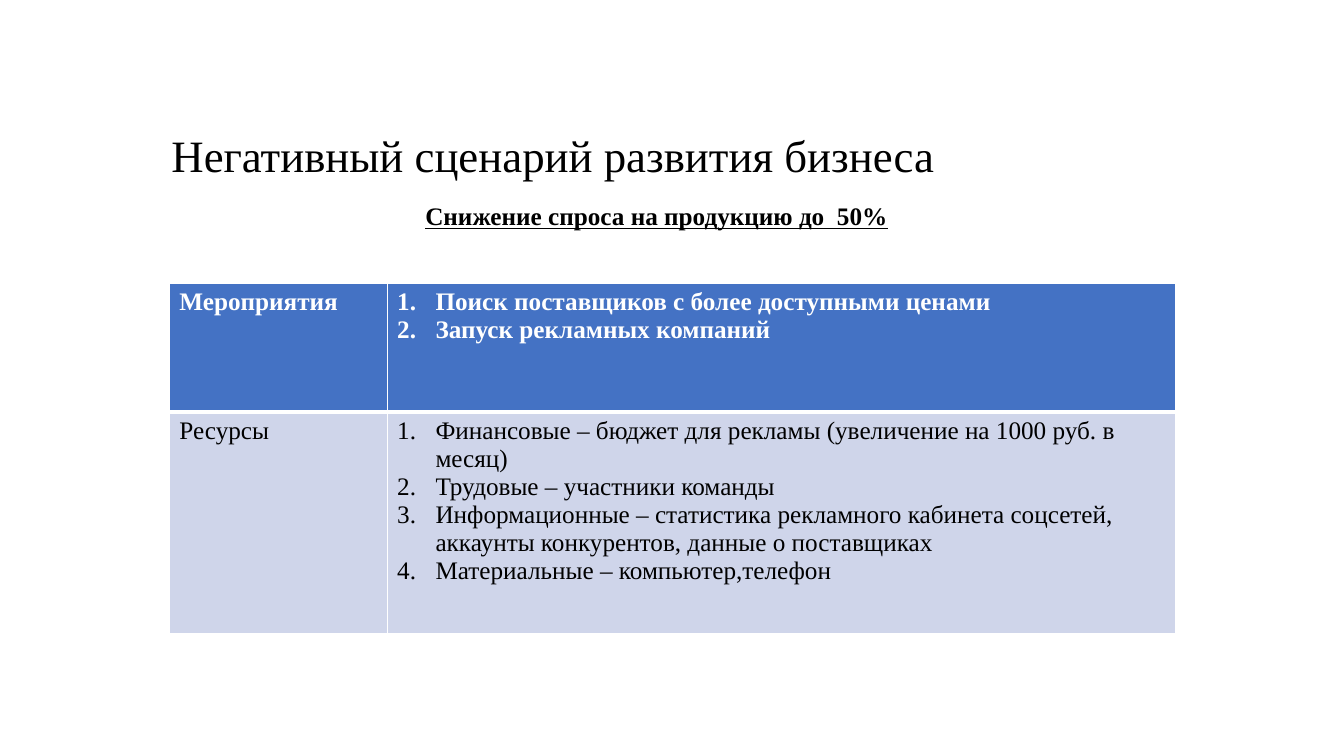
from pptx import Presentation
from pptx.dml.color import RGBColor
from pptx.enum.text import MSO_ANCHOR, MSO_AUTO_SIZE, PP_ALIGN
from pptx.oxml.ns import qn
from pptx.util import Inches, Pt
from lxml import etree

LEFT = PP_ALIGN.LEFT
TOP = MSO_ANCHOR.TOP
NO_AUTOFIT = MSO_AUTO_SIZE.NONE
FIT_SHAPE = MSO_AUTO_SIZE.SHAPE_TO_FIT_TEXT
TITLE_ONLY = 5
COLORS = {"text": "000000", "white": "FFFFFF", "header": "4472C4", "band": "CFD5EA"}
LIST_INDENT = 0.38

ACTIVITIES = [
    "Поиск поставщиков с более доступными ценами",
    "Запуск рекламных компаний",
]
RESOURCES = [
    "Финансовые – бюджет для рекламы (увеличение на 1000 руб. в месяц)",
    "Трудовые – участники команды",
    "Информационные – статистика рекламного кабинета соцсетей, "
    "аккаунты конкурентов, данные о поставщиках",
    "Материальные – компьютер,телефон",
]


class ScenarioSlide:
    """Holds the text style and the slide that receives the elements."""

    def __init__(self, slide, font="Times New Roman", size=18):
        self.slide = slide
        self.font = font
        self.size = size

    def add_text(self, paragraph, text, color="text", size=None, bold=False, underline=False):
        paragraph.alignment = LEFT
        run = paragraph.add_run()
        run.text = text
        run.font.name = self.font
        run.font.size = Pt(size or self.size)
        run.font.bold = bold
        run.font.underline = underline
        run.font.color.rgb = RGBColor.from_string(COLORS[color])

    def title(self, text, left, top, width, height):
        shape = self.slide.shapes.title
        shape.left, shape.top = Inches(left), Inches(top)
        shape.width, shape.height = Inches(width), Inches(height)
        frame = shape.text_frame
        frame.auto_size = NO_AUTOFIT
        frame.vertical_anchor = TOP
        self.add_text(frame.paragraphs[0], text, size=32)

    def subtitle(self, text, left, top, width, height):
        shape = self.slide.shapes.add_textbox(
            Inches(left), Inches(top), Inches(width), Inches(height))
        frame = shape.text_frame
        frame.word_wrap = False
        frame.auto_size = FIT_SHAPE
        self.add_text(frame.paragraphs[0], text, bold=True, underline=True)

    def number(self, paragraph):
        properties = paragraph._p.get_or_add_pPr()
        properties.set("marL", str(Inches(LIST_INDENT)))
        properties.set("indent", str(-Inches(LIST_INDENT)))
        etree.SubElement(properties, qn("a:buFont"), typeface="+mj-lt")
        etree.SubElement(properties, qn("a:buAutoNum"), type="arabicPeriod")

    def borders(self, cell, widths):
        properties = cell._tc.get_or_add_tcPr()
        for side, width in widths.items():
            line = etree.SubElement(properties, qn(f"a:ln{side}"), w=str(Pt(width)))
            fill = etree.SubElement(line, qn("a:solidFill"))
            etree.SubElement(fill, qn("a:srgbClr"), val=COLORS["white"])

    def cell(self, cell, lines, is_header, is_list):
        top, bottom = (1, 3) if is_header else (3, 1)
        self.borders(cell, {"L": 1, "R": 1, "T": top, "B": bottom})
        cell.fill.solid()
        fill = COLORS["header" if is_header else "band"]
        cell.fill.fore_color.rgb = RGBColor.from_string(fill)
        frame = cell.text_frame
        for index, text in enumerate(lines):
            paragraph = frame.add_paragraph() if index else frame.paragraphs[0]
            self.add_text(paragraph, text, "white" if is_header else "text", bold=is_header)
            if is_list:
                self.number(paragraph)

    def table(self, rows, left, top, column_widths, row_heights):
        table = self.slide.shapes.add_table(
            len(rows), len(column_widths), Inches(left), Inches(top),
            Inches(sum(column_widths)), Inches(sum(row_heights))).table
        for column, width in zip(table.columns, column_widths):
            column.width = Inches(width)
        for row, height in zip(table.rows, row_heights):
            row.height = Inches(height)
        for row_index, (heading, items) in enumerate(rows):
            is_header = row_index == 0
            self.cell(table.cell(row_index, 0), [heading], is_header, False)
            self.cell(table.cell(row_index, 1), items, is_header, True)


def main():
    presentation = Presentation()
    presentation.slide_width = Inches(13.33)
    presentation.slide_height = Inches(7.5)
    layout = presentation.slide_layouts[TITLE_ONLY]
    scenario = ScenarioSlide(presentation.slides.add_slide(layout))
    scenario.title("Негативный сценарий развития бизнеса", 1.6, 1.22, 8.66, 0.64)
    scenario.subtitle("Снижение спроса на продукцию до  50%", 4.12, 1.94, 4.83, 0.4)
    scenario.table([("Мероприятия", ACTIVITIES), ("Ресурсы", RESOURCES)],
                   1.68, 2.81, [2.16, 7.82], [1.28, 2.2])
    presentation.save("out.pptx")


if __name__ == "__main__":
    main()
